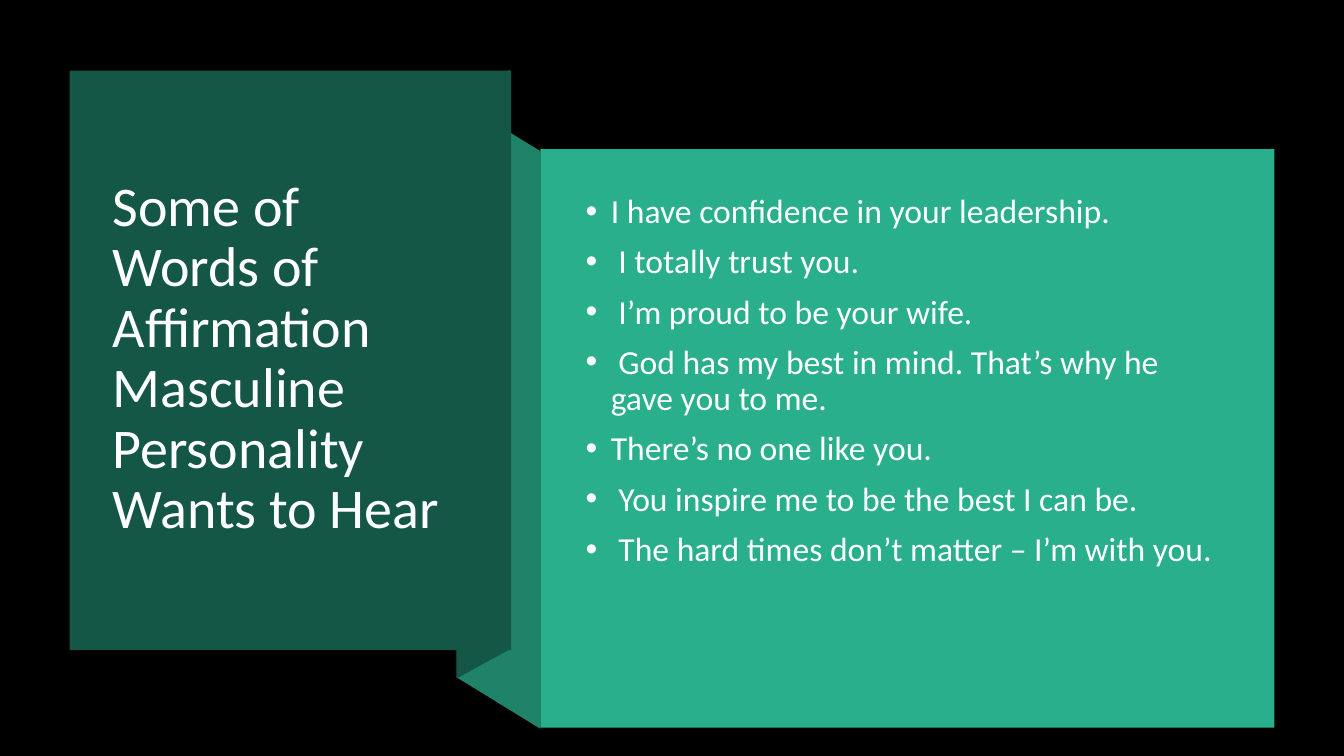
import pptx
import pptx.dml.color
import pptx.enum.shapes
import pptx.enum.text
import pptx.util
from lxml import etree
from pptx.util import Inches

COLORS = {
    "background": "000000",
    "title_panel": "155746",
    "fold": "1F8369",
    "body_panel": "29AF8C",
    "title_text": "FFFFFF",
    "body_text": "FEFFFF",
}
TITLE = "Some of Words of Affirmation Masculine Personality Wants to Hear"
AFFIRMATIONS = [
    "I have confidence in your leadership.",
    " I totally trust you.",
    " I’m proud to be your wife.",
    " God has my best in mind. That’s why he gave you to me.",
    "There’s no one like you.",
    " You inspire me to be the best I can be.",
    " The hard times don’t matter – I’m with you.",
]


class SlideBuilder:
    """Holds the style and the current slide."""

    font_name = "Calibri"
    line_spacing = 0.9

    def __init__(self, slide):
        self.slide = slide

    def color(self, name):
        return pptx.dml.color.RGBColor.from_string(COLORS[name])

    def background(self, color):
        fill = self.slide.background.fill
        fill.solid()
        fill.fore_color.rgb = self.color(color)

    def paint(self, shape, color):
        shape.shadow.inherit = False
        shape.fill.solid()
        shape.fill.fore_color.rgb = self.color(color)
        shape.line.fill.background()

    def panel(self, left, top, width, height, color):
        shape = self.slide.shapes.add_shape(
            pptx.enum.shapes.MSO_SHAPE.RECTANGLE,
            Inches(left), Inches(top), Inches(width), Inches(height))
        self.paint(shape, color)

    def polygon(self, points, color):
        start, *others = [(Inches(x), Inches(y)) for x, y in points]
        builder = self.slide.shapes.build_freeform(*start)
        builder.add_line_segments(others, close=True)
        self.paint(builder.convert_to_shape(), color)

    def text(self, left, top, width, height, lines, size, color, anchor, bullets=False):
        box = self.slide.shapes.add_textbox(
            Inches(left), Inches(top), Inches(width), Inches(height))
        frame = box.text_frame
        frame.word_wrap = True
        frame.vertical_anchor = anchor
        for index, line in enumerate(lines):
            paragraph = frame.add_paragraph() if index else frame.paragraphs[0]
            paragraph.line_spacing = self.line_spacing
            if index:
                paragraph.space_before = pptx.util.Pt(10)
            if bullets:
                self.bullet(paragraph)
            run = paragraph.add_run()
            run.text = line
            run.font.name = self.font_name
            run.font.size = pptx.util.Pt(size)
            run.font.color.rgb = self.color(color)

    def bullet(self, paragraph):
        properties = paragraph._p.get_or_add_pPr()
        properties.set("marL", str(Inches(0.25)))
        properties.set("indent", str(Inches(-0.25)))
        font = etree.SubElement(properties, pptx.oxml.ns.qn("a:buFont"))
        font.set("typeface", "Arial")
        character = etree.SubElement(properties, pptx.oxml.ns.qn("a:buChar"))
        character.set("char", "•")


def main():
    presentation = pptx.Presentation()
    presentation.slide_width = Inches(13.33)
    presentation.slide_height = Inches(7.5)
    builder = SlideBuilder(presentation.slides.add_slide(presentation.slide_layouts[6]))
    builder.background("background")

    # Folded ribbon between the two panels
    builder.polygon([(5.36, 7.23), (4.53, 6.72), (4.53, 0.99), (5.36, 1.5)], "fold")
    builder.polygon([(5.06, 6.44), (4.53, 6.73), (4.53, 0.98), (5.06, 0.69)], "title_panel")

    # Title panel
    builder.panel(0.69, 0.7, 4.38, 5.75, "title_panel")
    builder.text(1.02, 1.07, 3.56, 4.99, [TITLE], 40, "title_text",
                 pptx.enum.text.MSO_ANCHOR.MIDDLE)

    # Affirmations panel
    builder.panel(5.36, 1.48, 7.28, 5.74, "body_panel")
    builder.text(5.71, 1.88, 6.51, 4.74, AFFIRMATIONS, 24, "body_text",
                 pptx.enum.text.MSO_ANCHOR.TOP, bullets=True)

    presentation.save("out.pptx")


if __name__ == "__main__":
    main()
